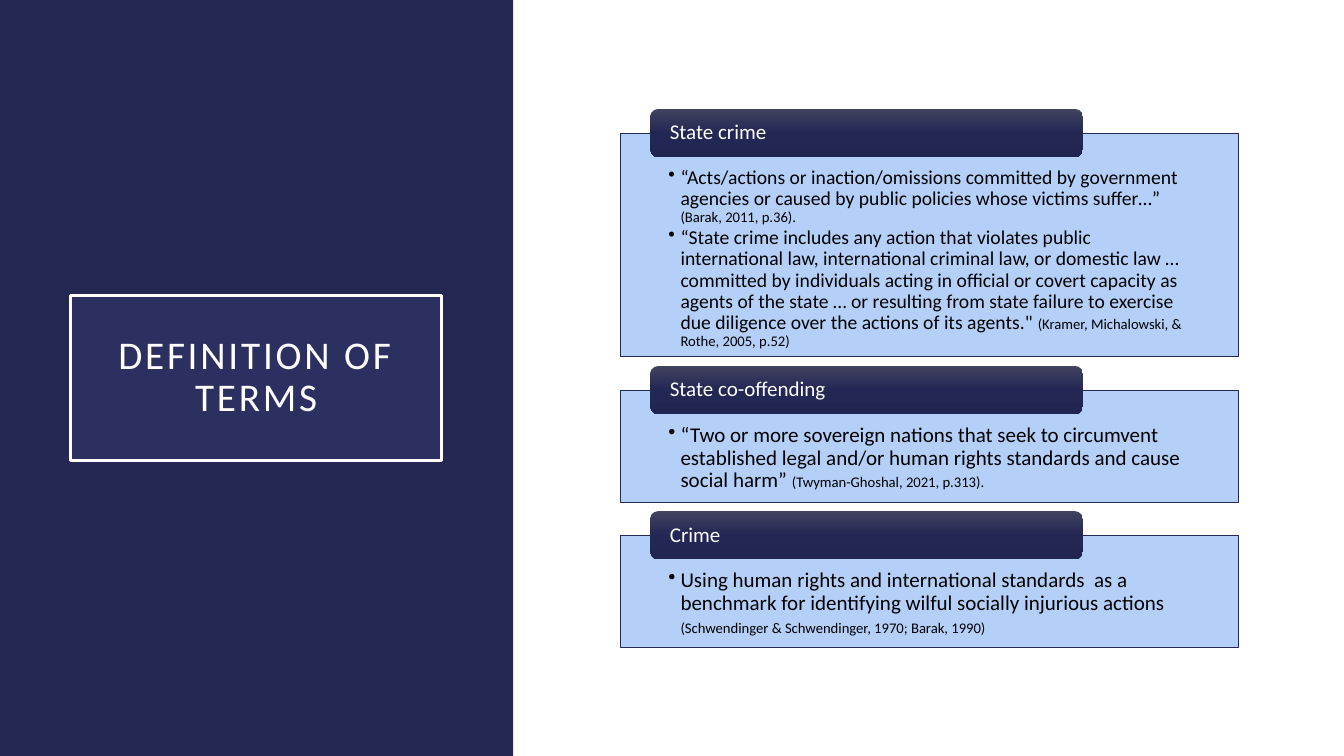
import copy

import pptx
import pptx.dml.color
import pptx.enum.shapes
import pptx.enum.text
import pptx.oxml
import pptx.oxml.ns
import pptx.util

PX = 9144  # 100 px to the inch
NAVY, SKY, WHITE, BLACK = "242852", "ACCBF9", "FFFFFF", "000000"
HEADER_STOPS = [(0, "414360"), (0.5, "232753"), (1, "202551")]
SHAPES = pptx.enum.shapes.MSO_SHAPE
ANCHORS = pptx.enum.text.MSO_ANCHOR
ALIGN = pptx.enum.text.PP_ALIGN
qn = pptx.oxml.ns.qn


def color(hex_text):
    return pptx.dml.color.RGBColor.from_string(hex_text)


def add_box(kind, bounds, fill, alpha=100, line=None, insets=(0, 0, 0, 0),
            anchor=ANCHORS.MIDDLE, paragraphs=(), align=ALIGN.LEFT, font_color=WHITE):
    """Add a filled shape; each paragraph is a list of (text, size) runs."""
    shape = slide.shapes.add_shape(kind, *(value * PX for value in bounds))
    shape.shadow.inherit = False
    shape.fill.solid()
    shape.fill.fore_color.rgb = color(fill)
    if alpha < 100:
        fill_color = shape._element.spPr.find(".//" + qn("a:srgbClr"))
        fill_color.append(pptx.oxml.parse_xml(
            f'<a:alpha {pptx.oxml.ns.nsdecls("a")} val="{alpha * 1000}"/>'))
    if line:
        shape.line.color.rgb = color(line[0])
        shape.line.width = pptx.util.Pt(line[1])
    else:
        shape.line.fill.background()
    frame = shape.text_frame
    frame_format = {"word_wrap": True, "vertical_anchor": anchor}
    for side, inset in zip(("left", "top", "right", "bottom"), insets):
        frame_format[f"margin_{side}"] = inset * PX
    for name, value in frame_format.items():
        setattr(frame, name, value)
    for index, runs in enumerate(paragraphs):
        paragraph = frame.add_paragraph() if index else frame.paragraphs[0]
        paragraph.alignment = align
        paragraph.line_spacing = 0.9
        for text, size in runs:
            run = paragraph.add_run()
            run.text = text
            font_format = {"name": "Calibri", "size": pptx.util.Pt(size)}
            for name, value in font_format.items():
                setattr(run.font, name, value)
            run.font.color.rgb = color(font_color)
    return shape


presentation = pptx.Presentation()
presentation.slide_width = 1333 * PX
presentation.slide_height = 750 * PX
slide = presentation.slides.add_slide(presentation.slide_layouts[6])

# Left panel and title
add_box(SHAPES.RECTANGLE, (0, 0, 509, 750), NAVY)
title = add_box(SHAPES.RECTANGLE, (70, 293, 368, 164), "5C64B7", alpha=15,
                line=(WHITE, 2.5), insets=(20, 20, 20, 20), align=ALIGN.CENTER,
                paragraphs=[[("DEFINITION OF TERMS", 28)]])
title.text_frame.paragraphs[0].runs[0].font._element.set("spc", "200")

# Definitions: heading, top, height, paragraphs
definitions = [
    ("State crime", 132, 222, [
        [("“Acts/actions or inaction/omissions committed by government agencies or "
          "caused by public policies whose victims suffer…” ", 14),
         ("(Barak, 2011, p.36).", 10.5)],
        [("“State crime includes any action that violates public international law, "
          "international criminal law, or domestic law … committed by individuals "
          "acting in official or covert capacity as agents of the state … or resulting "
          "from state failure to exercise due diligence over the actions of its "
          "agents.\" ", 14),
         ("(Kramer, Michalowski, & Rothe, 2005, p.52)", 10.5)],
    ]),
    ("State co-offending", 387, 111, [
        [("“Two or more sovereign nations that seek to circumvent established legal "
          "and/or human rights standards and cause social harm” ", 15),
         ("(Twyman-Ghoshal, 2021, p.313).", 10.5)],
    ]),
    ("Crime", 531, 111, [
        [("Using human rights and international standards  as a benchmark for "
          "identifying wilful socially injurious actions ", 15),
         ("(Schwendinger & Schwendinger, 1970; Barak, 1990)", 10.5),
         (" ", 15)],
    ]),
]

for heading, top, height, paragraphs in definitions:
    body = add_box(SHAPES.RECTANGLE, (615, top, 613, height), SKY, alpha=90,
                   line=(NAVY, 0.5), insets=(48, 34, 48, 11), anchor=ANCHORS.TOP,
                   paragraphs=paragraphs, font_color=BLACK)
    for paragraph in body.text_frame.paragraphs:
        paragraph.space_after = pptx.util.Pt(1.5)
        properties = paragraph._p.get_or_add_pPr()
        properties.set("marL", str(12 * PX))
        properties.set("indent", str(-12 * PX))
        properties.append(pptx.oxml.parse_xml(
            f'<a:buChar {pptx.oxml.ns.nsdecls("a")} char="•"/>'))

    header = add_box(SHAPES.ROUNDED_RECTANGLE, (645, top - 24, 429, 48), NAVY,
                     insets=(17, 0, 17, 0), paragraphs=[[(heading, 15)]])
    header.fill.gradient()
    header.fill.gradient_angle = 270
    stop_list = header._element.spPr.find(".//" + qn("a:gsLst"))
    stop_list.append(copy.deepcopy(stop_list[-1]))
    for stop, (position, stop_color) in zip(header.fill.gradient_stops, HEADER_STOPS):
        stop.position = position
        stop.color.rgb = color(stop_color)

presentation.save("out.pptx")
